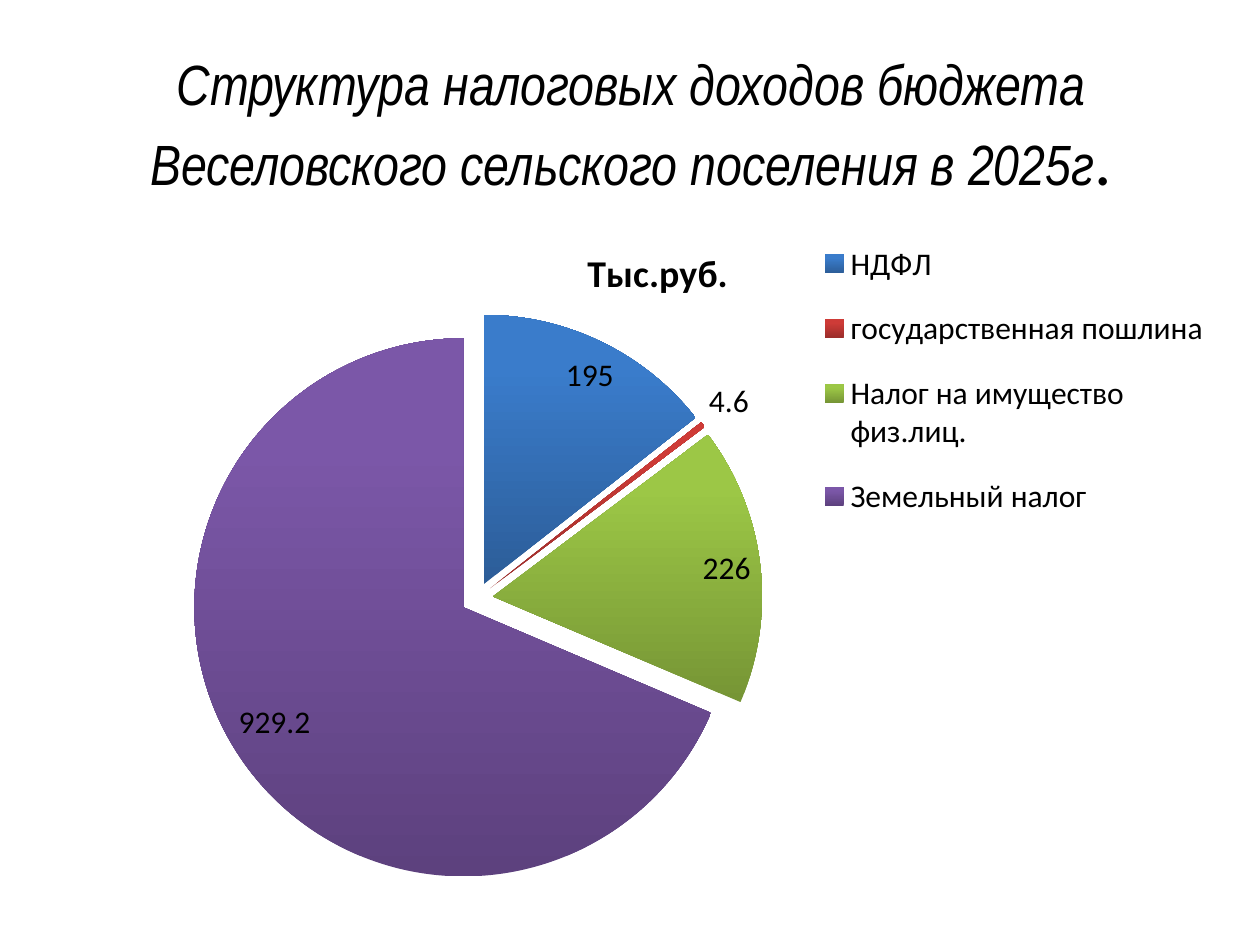
from lxml import etree
from pptx import Presentation
from pptx.chart.data import CategoryChartData
from pptx.dml.color import RGBColor
from pptx.enum.chart import XL_CHART_TYPE, XL_LABEL_POSITION, XL_LEGEND_POSITION
from pptx.enum.text import MSO_ANCHOR, PP_ALIGN
from pptx.oxml.ns import qn
from pptx.util import Inches, Pt

PIE = XL_CHART_TYPE.PIE
RIGHT = XL_LEGEND_POSITION.RIGHT
BEST_FIT = XL_LABEL_POSITION.BEST_FIT

TITLE_RUNS = [
    ("Структура налоговых доходов бюджета "
     "Веселовского сельского поселения в 2025г",
     dict(font="Arial Narrow", size=32.4, italic=True)),
    (".", dict(font="Calibri", size=39.6)),
]
CHART_TITLE = "Тыс.руб."
TAXES = [  # name, value, colour key
    ("НДФЛ", 195, "blue"),
    ("государственная пошлина", 4.6, "red"),
    ("Налог на имущество физ.лиц.", 226, "green"),
    ("Земельный налог", 929.2, "purple"),
]
COLORS = {
    "text": "000000",
    "blue": ("2C5D98", "3A7CCB"),
    "red": ("9B2D2A", "CE3B37"),
    "green": ("769535", "9CC746"),
    "purple": ("5D417E", "7B57A8"),
}
TITLE_BOX = (0.51, 0.36, 9, 1.25)
CHART_BOX = (0.59, 1.62, 9.13, 5.59)
# Shares of the chart's size
TITLE_AT = dict(x=0.44, y=0.05)
PLOT_AT = dict(x=0.1, y=0.155, w=0.5, h=0.81)
LEGEND_AT = dict(x=0.66, y=0.02, w=0.33, h=0.46)
EXPLOSION = 6


def set_font(font, size, name="Calibri", bold=False, italic=False):
    font.name, font.size, font.bold, font.italic = name, Pt(size), bold, italic
    font.color.rgb = RGBColor.from_string(COLORS["text"])


def add_run(p, text, font="Calibri", size=18, italic=False):
    r = p.add_run()
    r.text = text
    set_font(r.font, size, name=font, italic=italic)


def place(parent, before, target=None, **shares):
    """Give a chart part a manual layout, put ahead of the named child."""
    for old in parent.findall(qn("c:layout")):
        parent.remove(old)
    layout = etree.Element(qn("c:layout"))
    manual = etree.SubElement(layout, qn("c:manualLayout"))
    settings = {"layoutTarget": target} if target else {}
    settings |= {"xMode": "edge", "yMode": "edge"} | shares
    for key, value in settings.items():
        etree.SubElement(manual, qn(f"c:{key}")).set("val", str(value))
    parent.find(qn(before)).addprevious(layout)


def add_title(slide):
    tf = slide.shapes.add_textbox(*map(Inches, TITLE_BOX)).text_frame
    tf.word_wrap = True
    tf.vertical_anchor = MSO_ANCHOR.MIDDLE
    p = tf.paragraphs[0]
    p.alignment = PP_ALIGN.CENTER
    for text, style in TITLE_RUNS:
        add_run(p, text, **style)


def add_pie(slide):
    data = CategoryChartData()
    data.categories = [name for name, _, _ in TAXES]
    data.add_series(CHART_TITLE, [value for _, value, _ in TAXES])
    chart = slide.shapes.add_chart(PIE, *map(Inches, CHART_BOX), data).chart
    set_font(chart.font, 18)

    chart.has_title = True
    tf = chart.chart_title.text_frame
    tf.text = CHART_TITLE
    set_font(tf.paragraphs[0].runs[0].font, 21.6, bold=True)
    chart.chart_title.include_in_layout = False
    place(chart.chart_title._element, "c:overlay", **TITLE_AT)

    chart.has_legend = True
    chart.legend.position = RIGHT
    chart.legend.include_in_layout = False
    set_font(chart.legend.font, 18)
    place(chart.legend._element, "c:overlay", **LEGEND_AT)

    plot = chart.plots[0]
    plot.vary_by_categories = True
    place(plot._element.getparent(), "c:pieChart", target="inner", **PLOT_AT)

    series = plot.series[0]
    explosion = etree.Element(qn("c:explosion"))
    explosion.set("val", str(EXPLOSION))
    series._element.find(qn("c:tx")).addnext(explosion)
    for i, (_, _, key) in enumerate(TAXES):
        fill = series.points[i].format.fill
        fill.gradient()
        fill.gradient_angle = 90
        for stop, color, position in zip(fill.gradient_stops, COLORS[key], (0, 0.8)):
            stop.color.rgb = RGBColor.from_string(color)
            stop.position = position

    labels = series.data_labels
    labels.show_value = True
    labels.position = BEST_FIT
    set_font(labels.font, 18)


prs = Presentation()
prs.slide_width, prs.slide_height = Inches(10), Inches(7.5)
slide = prs.slides.add_slide(prs.slide_layouts[6])
add_title(slide)
add_pie(slide)
prs.save("out.pptx")
